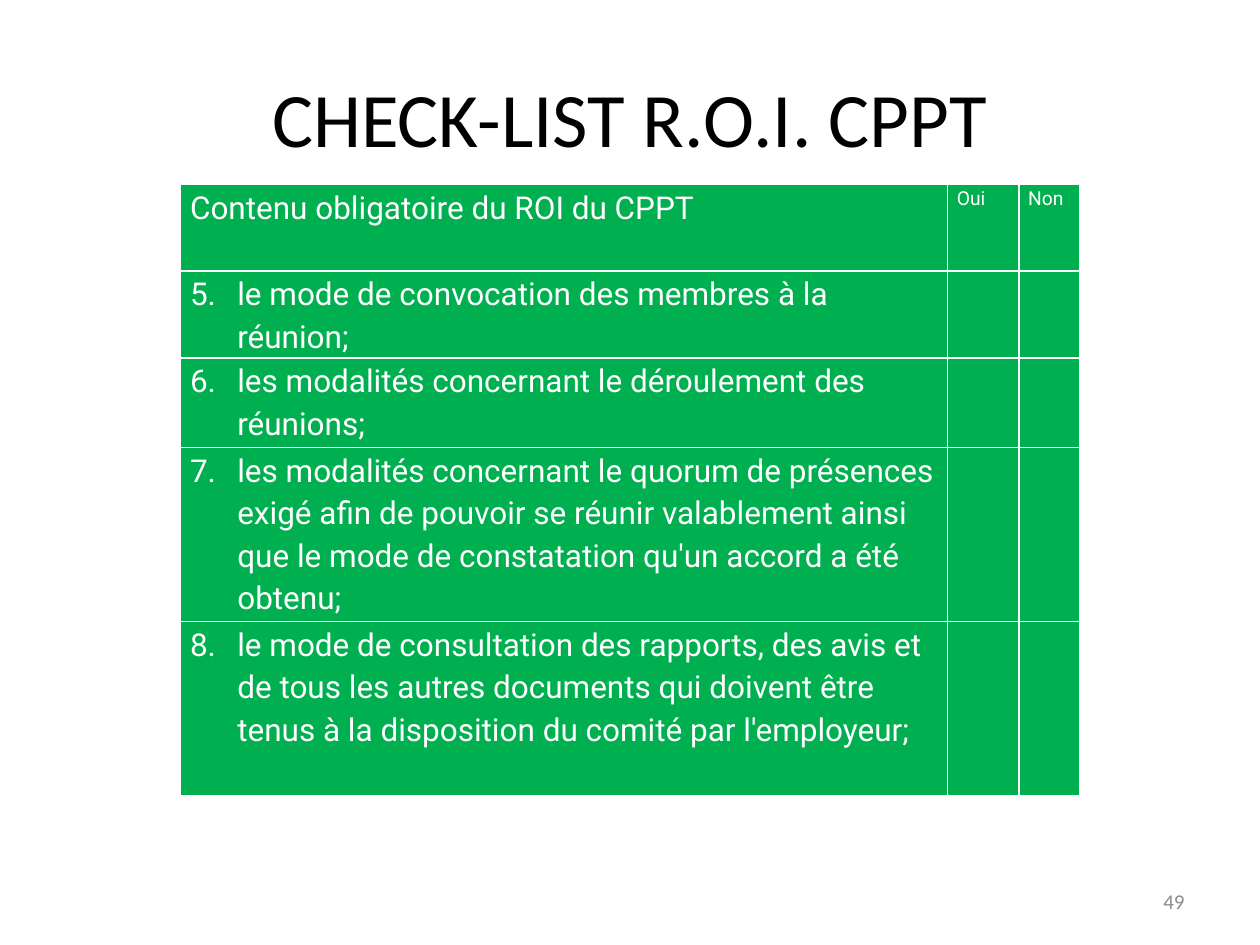
import dataclasses
import typing

import pptx
import pptx.dml.color
import pptx.enum.text
import pptx.oxml
import pptx.oxml.ns
import pptx.util

Pt = pptx.util.Pt
ALIGN = pptx.enum.text.PP_ALIGN
MIDDLE = pptx.enum.text.MSO_ANCHOR.MIDDLE
HUES = {"green": "00B050", "white": "FFFFFF", "black": "000000", "grey": "8C8C8C"}
NS = pptx.oxml.ns.nsdecls("a")


@dataclasses.dataclass
class Label:
    text: str
    box: tuple[float, float, float, float]
    size: float
    hue: str
    align: typing.Any


@dataclasses.dataclass
class Row:
    text: str
    height: float


LABELS = [
    Label("CHECK-LIST R.O.I. CPPT", (36, 21.6, 648, 90), 44, "black", ALIGN.CENTER),
    Label("49", (516, 500.4, 168, 28.8), 12, "grey", ALIGN.RIGHT),
]
HEADS = ["Contenu obligatoire du ROI du CPPT", "Oui", "Non"]
WIDTHS = [438.2, 40.8, 35]
HEAD_TALL = 49.5
FIRST = 5
ROWS = [
    Row("le mode de convocation des membres à la réunion;", 49.5),
    Row("les modalités concernant le déroulement des réunions;", 51.3),
    Row("les modalités concernant le quorum de présences exigé afin de pouvoir "
        "se réunir valablement ainsi que le mode de constatation qu'un accord "
        "a été obtenu;", 99.3),
    Row("le mode de consultation des rapports, des avis et de tous les autres "
        "documents qui doivent être tenus à la disposition du comité par "
        "l'employeur;", 99.3),
]


def style(thing: typing.Any, format: dict[str, typing.Any]) -> None:
    for name, value in format.items():
        setattr(thing, name, value)


def paint(font: typing.Any, face: str, size: float, hue: str) -> None:
    style(font, {"name": face, "size": Pt(size)})
    font.color.rgb = pptx.dml.color.RGBColor.from_string(HUES[hue])


def draw_label(slide: typing.Any, label: Label) -> None:
    frame = slide.shapes.add_textbox(*map(Pt, label.box)).text_frame
    style(frame, {"word_wrap": True, "vertical_anchor": MIDDLE, "text": label.text})
    para = frame.paragraphs[0]
    para.alignment = label.align
    paint(para.runs[0].font, "Calibri", label.size, label.hue)


def dress(cell: typing.Any) -> None:
    """Fill a cell and rule its four sides."""
    style(cell, {"margin_left": Pt(5.4), "margin_right": Pt(5.4),
                 "margin_top": 0, "margin_bottom": 0})
    cell.fill.solid()
    cell.fill.fore_color.rgb = pptx.dml.color.RGBColor.from_string(HUES["green"])
    props = cell._tc.get_or_add_tcPr()
    for spot, side in enumerate("LRTB"):
        props.insert(spot, pptx.oxml.parse_xml(
            f'<a:ln{side} {NS} w="{Pt(1)}"><a:solidFill>'
            f'<a:srgbClr val="{HUES["white"]}"/></a:solidFill></a:ln{side}>'))


def write(cell: typing.Any, text: str, size: float, number: int = 0) -> None:
    """Put text in a cell, as a numbered item if a number is given."""
    cell.text = text
    para = cell.text_frame.paragraphs[0]
    if number:
        props = para._p.get_or_add_pPr()
        style_of = {"marL": Pt(27), "indent": Pt(-27)}
        for name, value in style_of.items():
            props.set(name, str(value))
        for part in (
            f'<a:buFont {NS} typeface="+mj-lt"/>',
            f'<a:buAutoNum {NS} type="arabicPeriod" startAt="{number}"/>',
            f'<a:tabLst {NS}><a:tab pos="{Pt(36)}" algn="l"/></a:tabLst>',
        ):
            props.append(pptx.oxml.parse_xml(part))
        para.space_after = Pt(10)
    para.line_spacing = 1.15
    paint(para.runs[0].font, "Roboto", size, "white")


def draw_table(slide: typing.Any) -> None:
    talls = [HEAD_TALL] + [row.height for row in ROWS]
    table = slide.shapes.add_table(
        len(talls), len(WIDTHS), Pt(103.2), Pt(105.4),
        Pt(sum(WIDTHS)), Pt(sum(talls))).table
    for column, width in zip(table.columns, WIDTHS):
        column.width = Pt(width)
    for line, tall in zip(table.rows, talls):
        line.height = Pt(tall)
    for cell in table.iter_cells():
        dress(cell)
    # Header row
    for col, head in enumerate(HEADS):
        write(table.cell(0, col), head, 11 if col else 18)
    # Numbered items
    for spot, row in enumerate(ROWS):
        write(table.cell(spot + 1, 0), row.text, 18, FIRST + spot)


def main() -> None:
    deck = pptx.Presentation()
    style(deck, {"slide_width": Pt(720), "slide_height": Pt(540)})
    slide = deck.slides.add_slide(deck.slide_layouts[6])
    # Title and page number
    for label in LABELS:
        draw_label(slide, label)
    # Checklist
    draw_table(slide)
    deck.save("out.pptx")


if __name__ == "__main__":
    main()
